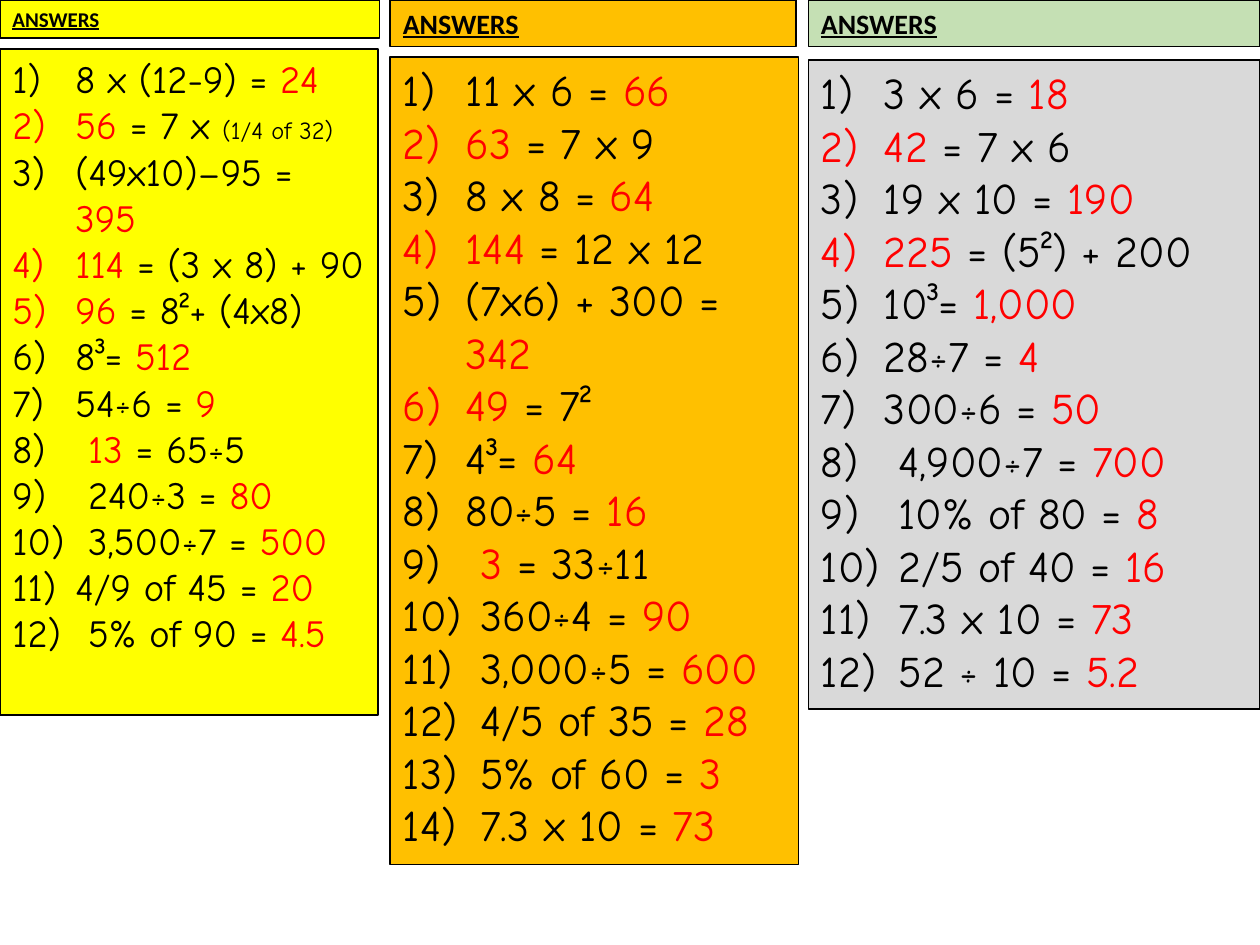
from lxml.etree import SubElement
from pptx import Presentation
from pptx.dml.color import RGBColor
from pptx.enum.shapes import MSO_SHAPE
from pptx.enum.text import MSO_ANCHOR, PP_ALIGN
from pptx.oxml.ns import qn
from pptx.util import Cm, Pt

BLACK = RGBColor(0x00, 0x00, 0x00)
RED = RGBColor(0xFF, 0x00, 0x00)
YELLOW = RGBColor(0xFF, 0xFF, 0x00)
ORANGE = RGBColor(0xFF, 0xC0, 0x00)
GREEN = RGBColor(0xC5, 0xE0, 0xB4)
GREY = RGBColor(0xD9, 0xD9, 0xD9)

HEADING = "ANSWERS"
HEADING_FONT = "Calibri"
ANSWER_FONT = "Comic Neue"
SMALL_PART = "(1/4 of 32)"
SMALL_SIZE = 14
NUMBER_INDENT = Cm(1.27)

# Boxes are left, top, width, height in cm; text between bars is red.
COLUMNS = [
    {
        "heading_box": (0, 0, 7.65, 0.77), "heading_fill": YELLOW, "heading_size": 12,
        "answer_box": (0, 0.99, 7.62, 13.42), "answer_fill": YELLOW, "answer_size": 22,
        "answers": [
            "8 x (12-9) = |24|",
            "|56| = 7 x ||" + SMALL_PART,
            "(49x10)–95 = |395|",
            "|114| = (3 x 8) + 90",
            "|96| = 8²+ (4x8)",
            "8³= |512|",
            "54÷6 = |9|",
            " |13| = 65÷5",
            " 240÷3 = |80|",
            " 3,500÷7 = |500|",
            "4/9 of 45 = |20|",
            " 5% of 90 = |4.5|",
        ],
    },
    {
        "heading_box": (7.87, 0, 8.18, 0.94), "heading_fill": ORANGE, "heading_size": 16,
        "answer_box": (7.87, 1.15, 8.23, 16.28), "answer_fill": ORANGE, "answer_size": 25,
        "answers": [
            "11 x 6 = |66|",
            "|63 |= 7 x 9",
            "8 x 8 = |64|",
            "|144| = 12 x 12",
            "(7x6) + 300 = |342|",
            "|49| = 7²",
            "4³= |64|",
            "80÷5 = |16|",
            " |3| = 33÷11",
            " 360÷4 = |90|",
            " 3,000÷5 = |600|",
            " 4/5 of 35 = |28|",
            " 5% of 60 = |3|",
            " 7.3 x 10 = |73|",
        ],
    },
    {
        "heading_box": (16.3, 0, 9.1, 0.94), "heading_fill": GREEN, "heading_size": 16,
        "answer_box": (16.3, 1.21, 9.1, 13.09), "answer_fill": GREY, "answer_size": 25,
        "answers": [
            "3 x 6 = |18|",
            "|42| = 7 x 6",
            "19 x 10 = |190|",
            "|225| = (5²) + 200",
            "10³= |1,000|",
            "28÷7 = |4|",
            "300÷6 = |50|",
            " 4,900÷7 = |700|",
            " 10% of 80 = |8|",
            " 2/5 of 40 = |16|",
            " 7.3 x 10 = |73|",
            " 52 ÷ 10 = |5.2|",
        ],
    },
]


def add_box(slide, box, fill_color):
    shape = slide.shapes.add_shape(MSO_SHAPE.RECTANGLE, *map(Cm, box))
    shape.shadow.inherit = False
    shape.fill.solid()
    shape.fill.fore_color.rgb = fill_color
    shape.line.color.rgb = BLACK
    shape.line.width = Pt(1)
    shape.text_frame.word_wrap = True
    shape.text_frame.vertical_anchor = MSO_ANCHOR.TOP
    return shape.text_frame


def add_run(paragraph, text, font_name, size, color):
    run = paragraph.add_run()
    run.text = text
    run.font.name = font_name
    run.font.size = Pt(size)
    run.font.color.rgb = color
    return run


def number_paragraph(paragraph):
    """Give the paragraph a hanging automatic number such as 1)."""
    properties = paragraph._p.get_or_add_pPr()
    properties.set("marL", str(NUMBER_INDENT))
    properties.set("indent", str(-NUMBER_INDENT))
    SubElement(properties, qn("a:buAutoNum"), type="arabicParenR")


def add_heading(slide, column):
    frame = add_box(slide, column["heading_box"], column["heading_fill"])
    paragraph = frame.paragraphs[0]
    paragraph.alignment = PP_ALIGN.LEFT
    run = add_run(paragraph, HEADING, HEADING_FONT, column["heading_size"], BLACK)
    run.font.bold = True
    run.font.underline = True


def add_answers(slide, column):
    frame = add_box(slide, column["answer_box"], column["answer_fill"])
    for index, answer in enumerate(column["answers"]):
        paragraph = frame.add_paragraph() if index else frame.paragraphs[0]
        paragraph.alignment = PP_ALIGN.LEFT
        number_paragraph(paragraph)
        for position, part in enumerate(answer.split("|")):
            if part:
                size = SMALL_SIZE if part == SMALL_PART else column["answer_size"]
                add_run(paragraph, part, ANSWER_FONT, size, RED if position % 2 else BLACK)


def main():
    presentation = Presentation()
    presentation.slide_width = Cm(25.4)
    presentation.slide_height = Cm(19.05)
    slide = presentation.slides.add_slide(presentation.slide_layouts[6])
    for column in COLUMNS:
        add_heading(slide, column)
        add_answers(slide, column)
    presentation.save("out.pptx")


if __name__ == "__main__":
    main()
